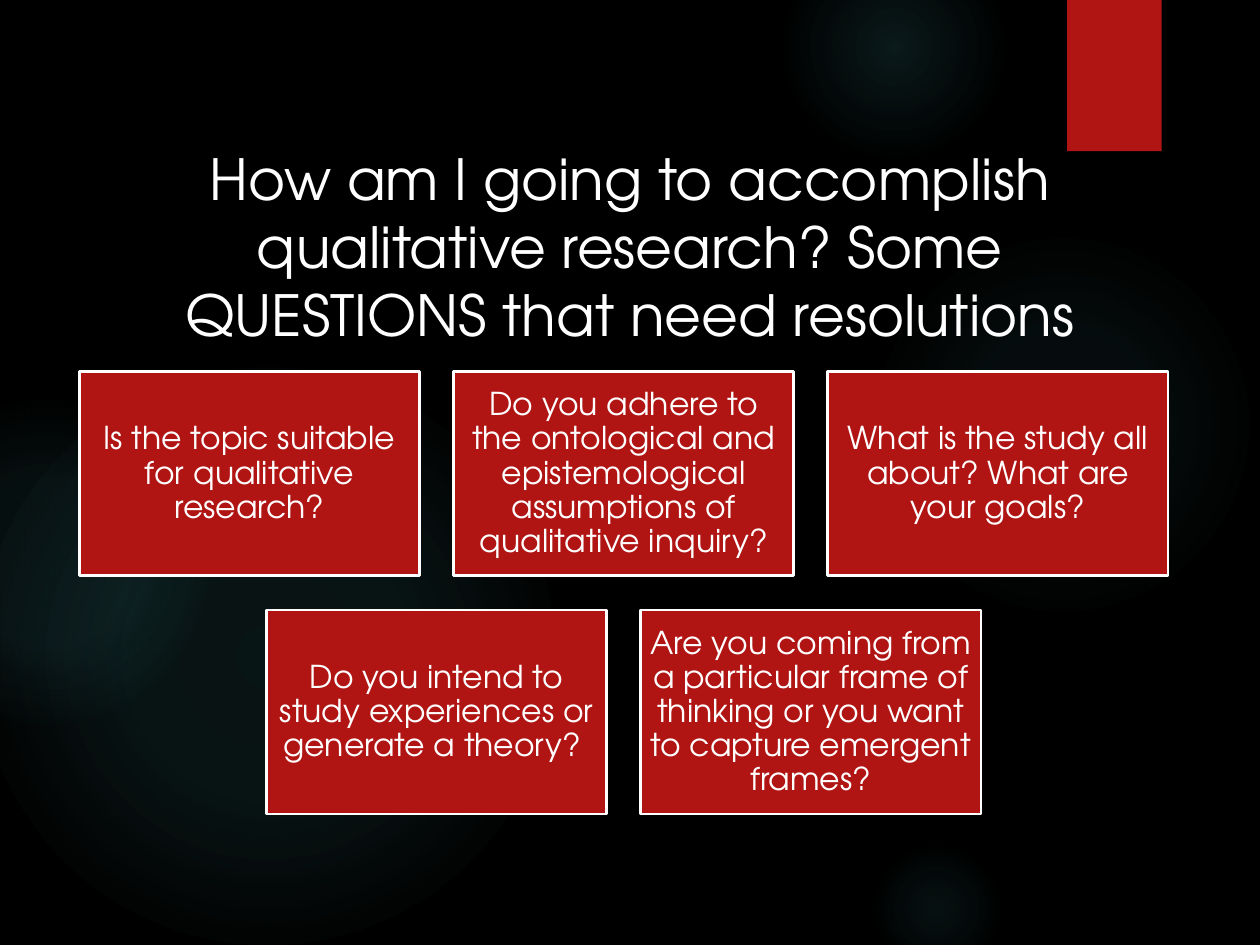
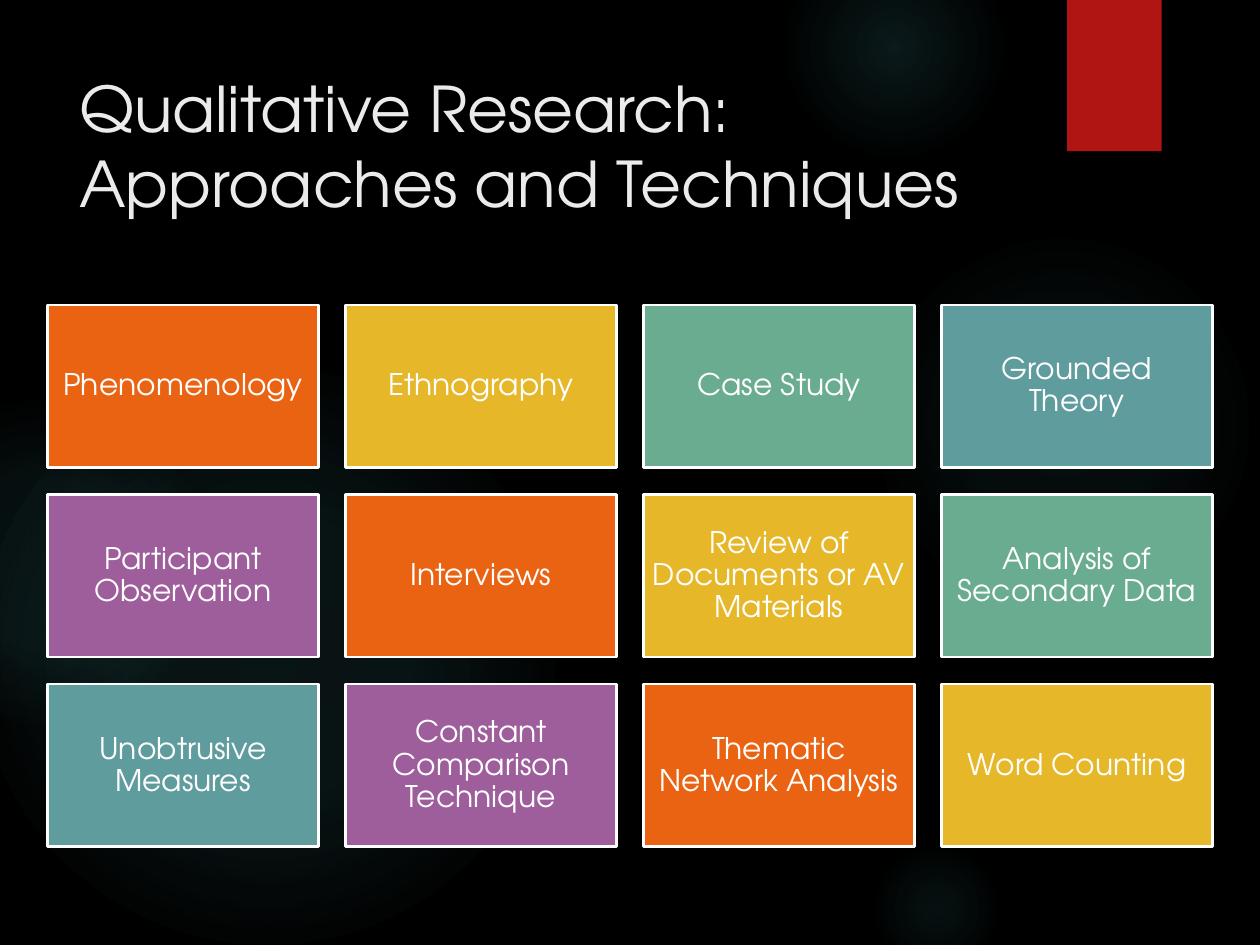
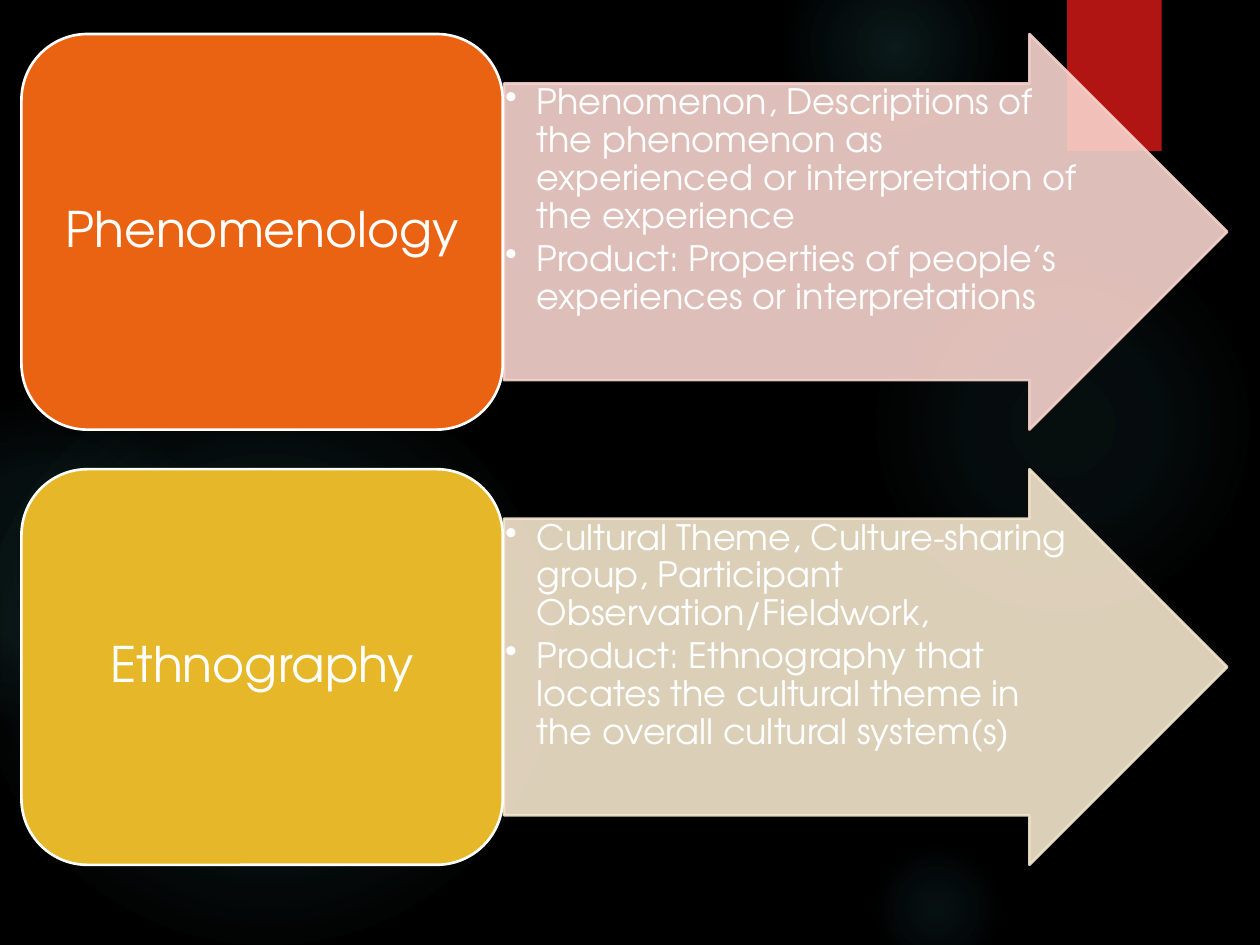
import itertools

import lxml.etree
import pptx
import pptx.dml.color
import pptx.enum.shapes
import pptx.enum.text
import pptx.oxml
import pptx.oxml.ns
import pptx.util

Inches, Pt = pptx.util.Inches, pptx.util.Pt
RGB = pptx.dml.color.RGBColor
SHAPE = pptx.enum.shapes.MSO_SHAPE
ALIGN = pptx.enum.text.PP_ALIGN
ANCHOR = pptx.enum.text.MSO_ANCHOR
qn = pptx.oxml.ns.qn

WIDE, HIGH = 10, 7.5
FONT = "TeX Gyre Adventor"
BLACK = RGB(0x00, 0x00, 0x00)
WHITE = RGB(0xFF, 0xFF, 0xFF)
PALE = RGB(0xEB, 0xEB, 0xEB)
RED = RGB(0xB0, 0x15, 0x13)
ORANGE = RGB(0xEA, 0x63, 0x12)
YELLOW = RGB(0xE6, 0xB7, 0x29)
GREEN = RGB(0x6A, 0xAC, 0x90)
TEAL = RGB(0x5F, 0x9C, 0x9D)
PURPLE = RGB(0x9E, 0x5E, 0x9B)
ROSE = RGB(0xF7, 0xD3, 0xCC)
CREAM = RGB(0xF5, 0xE6, 0xCD)
GLOW = RGB(0x50, 0xB9, 0xC1)

# Left, top, size, then (position, opacity) stops in percent
GLOWS = [
    (6.89, 1.83, 3.08, [(0, 7), (36, 6), (69, 0)]),
    (6.22, -0.5, 1.75, [(0, 14), (36, 7), (73, 0)]),
    (6.89, 6.67, 1.08, [(0, 9), (36, 5), (66, 0)]),
    (-0.17, 2.92, 4.58, [(0, 11), (36, 10), (75, 0)]),
    (-0.92, 3.17, 2.58, [(0, 8), (36, 8), (72, 0)]),
]

ASK_HEAD = ("How am I going to accomplish qualitative research? "
            "Some QUESTIONS that need resolutions")
ASK_ROWS = [
    ["Is the topic suitable for qualitative research?",
     "Do you adhere to the ontological and epistemological assumptions "
     "of qualitative inquiry?",
     "What is the study all about? What are your goals?"],
    ["Do you intend to study experiences or generate a theory? ",
     "Are you coming from a particular frame of thinking or you want "
     "to capture emergent frames?"],
]

WAY_HEAD = "Qualitative Research: Approaches and Techniques"
WAY_ROWS = [
    ["Phenomenology", "Ethnography", "Case Study", "Grounded Theory"],
    ["Participant Observation", "Interviews",
     "Review of Documents or AV Materials", "Analysis of Secondary Data"],
    ["Unobtrusive Measures", "Constant Comparison Technique",
     "Thematic Network Analysis", "Word Counting"],
]
WAY_FILLS = [ORANGE, YELLOW, GREEN, TEAL, PURPLE]

FLOWS = [
    ("Phenomenology", ORANGE, ROSE,
     ["Phenomenon, Descriptions of the phenomenon as experienced or "
      "interpretation of the experience",
      "Product: Properties of people’s experiences or interpretations"]),
    ("Ethnography", YELLOW, CREAM,
     ["Cultural Theme, Culture-sharing group, Participant "
      "Observation/Fieldwork,",
      "Product: Ethnography that locates the cultural theme in the overall "
      "cultural system(s)"]),
]


def add_form(slide, kind, box, fill, edge=None):
    form = slide.shapes.add_shape(kind, *map(Inches, box))
    form.shadow.inherit = False
    form.fill.solid()
    form.fill.fore_color.rgb = fill
    if edge is None:
        form.line.fill.background()
    else:
        form.line.color.rgb = edge
        form.line.width = Pt(1.5)
    return form


def fade(form, share):
    """Make the fill and the line of a form partly transparent."""
    for tint in form._element.spPr.iter(qn("a:srgbClr")):
        lxml.etree.SubElement(tint, qn("a:alpha"), val=str(share * 1000))


def add_glow(slide, left, top, size, stops):
    form = add_form(slide, SHAPE.OVAL, (left, top, size, size), GLOW)
    marks = "".join(
        f'<a:gs pos="{pos * 1000}"><a:srgbClr val="{GLOW}">'
        f'<a:alpha val="{share * 1000}"/></a:srgbClr></a:gs>'
        for pos, share in stops)
    grad = pptx.oxml.parse_xml(
        f'<a:gradFill {pptx.oxml.ns.nsdecls("a")}><a:gsLst>{marks}</a:gsLst>'
        '<a:path path="circle"><a:fillToRect l="50000" t="50000" '
        'r="50000" b="50000"/></a:path></a:gradFill>')
    props = form._element.spPr
    props.replace(props.find(qn("a:solidFill")), grad)


def write(form, lines, size, color=WHITE, align=ALIGN.CENTER,
          anchor=ANCHOR.MIDDLE, pad=(0.07, 0.07), space=0.9):
    frame = form.text_frame
    frame.text = "\n".join(lines)
    frame.word_wrap = True
    frame.vertical_anchor = anchor
    frame.margin_left = frame.margin_right = Inches(pad[0])
    frame.margin_top = frame.margin_bottom = Inches(pad[1])
    for para in frame.paragraphs:
        para.alignment = align
        para.line_spacing = space
        for run in para.runs:
            run.font.name = FONT
            run.font.size = Pt(size)
            run.font.color.rgb = color


def add_marks(form):
    """Give each paragraph a bullet with a hanging indent."""
    for para in form.text_frame.paragraphs:
        para.space_after = Pt(3)
        props = para._p.get_or_add_pPr()
        props.set("marL", str(Inches(0.25)))
        props.set("indent", str(-Inches(0.25)))
        lxml.etree.SubElement(props, qn("a:buChar"), char="•")


def add_title(slide, text, box, size, color, align):
    form = slide.shapes.add_textbox(*map(Inches, box))
    write(form, [text], size, color, align, ANCHOR.TOP, (0.1, 0.05), 1)


def add_cards(slide, rows, fills, mid, top, wide, size):
    """Centre each row of cards on mid; gaps are a tenth of a card's width."""
    high, step = wide * 0.6, wide * 1.1
    tints = itertools.cycle(fills)
    for r, row in enumerate(rows):
        left = mid - (len(row) * step - wide * 0.1) / 2
        for c, text in enumerate(row):
            box = left + c * step, top + r * wide * 0.7, wide, high
            card = add_form(slide, SHAPE.RECTANGLE, box, next(tints), WHITE)
            write(card, [text], size)


def add_flows(slide, top=0.27, high=3.14):
    for i, (name, fill, tint, notes) in enumerate(FLOWS):
        y = top + i * high * 1.1
        arrow = add_form(slide, SHAPE.RIGHT_ARROW, (4, y, 5.74, high),
                         tint, tint)
        arrow.adjustments[0] = 0.75
        arrow.adjustments[1] = 0.5
        fade(arrow, 90)
        write(arrow, notes, 20, align=ALIGN.LEFT, anchor=ANCHOR.TOP,
              pad=(0.01, 0.01))
        add_marks(arrow)
        label = add_form(slide, SHAPE.ROUNDED_RECTANGLE,
                         (0.17, y, 3.82, high), fill, WHITE)
        write(label, [name], 28, pad=(0.12, 0.06))


def add_page(deck):
    slide = deck.slides.add_slide(deck.slide_layouts[6])
    slide.background.fill.solid()
    slide.background.fill.fore_color.rgb = BLACK
    for glow in GLOWS:
        add_glow(slide, *glow)
    add_form(slide, SHAPE.RECTANGLE, (8.47, 0, 0.75, 1.2), RED)
    return slide


def main():
    deck = pptx.Presentation()
    deck.slide_width, deck.slide_height = Inches(WIDE), Inches(HIGH)

    asks = add_page(deck)
    add_title(asks, ASK_HEAD, (1, 1.09, 8, 0.92), 32.4, WHITE, ALIGN.CENTER)
    add_cards(asks, ASK_ROWS, [RED], mid=4.95, top=2.95, wide=2.7, size=18)

    ways = add_page(deck)
    add_title(ways, WAY_HEAD, (0.53, 0.5, 7.72, 1.53), 36, PALE, ALIGN.LEFT)
    add_cards(ways, WAY_ROWS, WAY_FILLS, mid=5, top=2.42, wide=2.15, size=17)

    add_flows(add_page(deck))
    deck.save("out.pptx")


if __name__ == "__main__":
    main()
